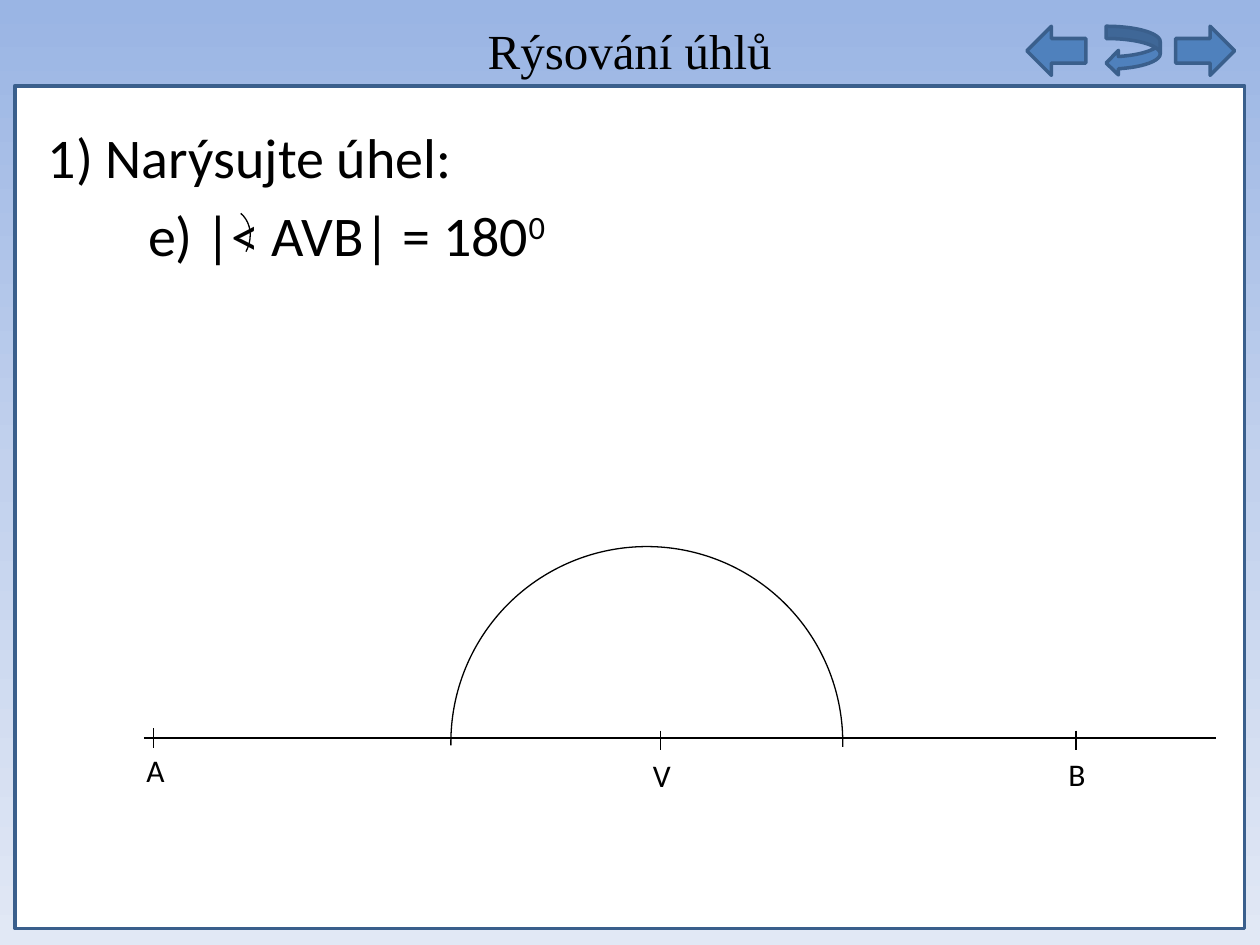
"""Builds a geometry slide on drawing a straight angle."""
from copy import deepcopy
from dataclasses import dataclass

from lxml import etree
from pptx import Presentation
from pptx.dml.color import RGBColor
from pptx.enum.shapes import MSO_CONNECTOR, MSO_SHAPE
from pptx.enum.text import MSO_ANCHOR, MSO_AUTO_SIZE, PP_ALIGN
from pptx.oxml.ns import qn
from pptx.util import Cm, Pt

STRAIGHT = MSO_CONNECTOR.STRAIGHT
RECTANGLE, ARC = MSO_SHAPE.RECTANGLE, MSO_SHAPE.ARC
LEFT_ARROW, RIGHT_ARROW = MSO_SHAPE.LEFT_ARROW, MSO_SHAPE.RIGHT_ARROW
RETURN_ARROW = MSO_SHAPE.CURVED_LEFT_ARROW
TOP, MIDDLE = MSO_ANCHOR.TOP, MSO_ANCHOR.MIDDLE
NO_AUTOSIZE = MSO_AUTO_SIZE.NONE
LEFT, CENTER = PP_ALIGN.LEFT, PP_ALIGN.CENTER


@dataclass(frozen=True)
class Theme:
    ink: str = "000000"
    panel: str = "FFFFFF"
    button: str = "4F81BD"
    border: str = "3A5F8C"
    sky: tuple = ((0, "9AB5E4"), (0.5, "C2D1ED"), (1, "E1E8F5"))
    title_font: str = "Times New Roman"
    body_font: str = "Calibri"
    title_size: int = 28
    body_size: int = 32
    label_size: int = 18
    border_width: float = 2
    drawing_width: float = 0.75


def write_text(paragraph, text, *, font, size, color, align=LEFT, superscript=False):
    run = paragraph.add_run()
    run.text = text
    run.font.name = font
    run.font.size = Pt(size)
    run.font.color.rgb = RGBColor.from_string(color)
    paragraph.alignment = align
    if superscript:
        run.font._element.set("baseline", "30000")


class SlideBuilder:
    def __init__(self, slide, theme):
        self.slide = slide
        self.theme = theme

    def background(self):
        fill = self.slide.background.fill
        fill.gradient()
        fill.gradient_angle = 270
        first_stop = fill._fill._gradFill.gsLst[0]
        first_stop.addnext(deepcopy(first_stop))
        for stop, (position, color) in zip(fill.gradient_stops, self.theme.sky):
            stop.position = position
            stop.color.rgb = RGBColor.from_string(color)

    def shape(self, kind, box, fill=None, angles=(), rotation=0):
        figure = self.slide.shapes.add_shape(kind, *map(Cm, box))
        figure.shadow.inherit = False
        figure.rotation = rotation
        for index, angle in enumerate(angles):
            figure.adjustments[index] = angle
        if fill:
            figure.fill.solid()
            figure.fill.fore_color.rgb = RGBColor.from_string(fill)
            self.outline(figure.line, self.theme.border, self.theme.border_width)
        else:
            figure.fill.background()
            self.outline(figure.line, self.theme.ink, self.theme.drawing_width)

    def outline(self, line, color, width):
        line.color.rgb = RGBColor.from_string(color)
        line.width = Pt(width)

    def segment(self, start, end):
        line = self.slide.shapes.add_connector(STRAIGHT, *map(Cm, start + end))
        self.outline(line.line, self.theme.ink, self.theme.drawing_width)
        etree.SubElement(line._element.spPr, qn("a:effectLst"))

    def placeholder(self, holder, box, anchor):
        holder.left, holder.top, holder.width, holder.height = map(Cm, box)
        holder._element.getparent().append(holder._element)
        frame = holder.text_frame
        frame.auto_size = NO_AUTOSIZE
        frame.vertical_anchor = anchor
        return frame

    def title(self, text, box):
        frame = self.placeholder(self.slide.shapes.title, box, MIDDLE)
        write_text(frame.paragraphs[0], text, font=self.theme.title_font,
                   size=self.theme.title_size, color=self.theme.ink, align=CENTER)

    def task(self, lines, box):
        frame = self.placeholder(self.slide.placeholders[1], box, TOP)
        for number, (indent, text, exponent) in enumerate(lines):
            paragraph = frame.add_paragraph() if number else frame.paragraphs[0]
            paragraph.space_before, paragraph.space_after = Pt(0), Pt(6)
            properties = paragraph._p.get_or_add_pPr()
            properties.set("marL", str(Cm(indent)))
            properties.set("indent", "0")
            etree.SubElement(properties, qn("a:buNone"))
            style = dict(font=self.theme.body_font, size=self.theme.body_size,
                         color=self.theme.ink)
            write_text(paragraph, text, **style)
            if exponent:
                write_text(paragraph, exponent, superscript=True, **style)

    def label(self, text, box):
        frame = self.slide.shapes.add_textbox(*map(Cm, box)).text_frame
        frame.word_wrap = True
        write_text(frame.paragraphs[0], text, font=self.theme.body_font,
                   size=self.theme.label_size, color=self.theme.ink)


def main():
    presentation = Presentation()
    presentation.slide_width, presentation.slide_height = Cm(25.4), Cm(19.05)
    theme = Theme()
    slide = presentation.slides.add_slide(presentation.slide_layouts[1])
    builder = SlideBuilder(slide, theme)

    builder.background()
    builder.shape(RECTANGLE, (0.3, 1.73, 24.79, 16.99), theme.panel)
    for arrow, left, width in ((RIGHT_ARROW, 23.7, 1.19), (LEFT_ARROW, 20.7, 1.19),
                               (RETURN_ARROW, 22.3, 1.09)):
        builder.shape(arrow, (left, 0.53, width, 0.99), theme.button)
    builder.title("Rýsování úhlů", (0.3, 0.28, 24.79, 1.45))
    builder.task([(0, "1) Narýsujte úhel:", ""), (2.02, "e) |< AVB| = 180", "0")],
                 (0.71, 2.34, 14.2, 3.2))

    builder.segment((2.9, 14.88), (24.51, 14.88))
    for point, x, tick_top, label_top in (("A", 3.1, 14.68, 15.01),
                                          ("V", 13.31, 14.73, 15.11),
                                          ("B", 21.69, 14.73, 15.09)):
        builder.segment((x, tick_top), (x, tick_top + 0.39))
        builder.label(point, (x - 0.4, label_top, 1.2, 1.02))
    builder.shape(ARC, (9.09, 11.02, 7.9, 7.9), angles=(107.49, 0.76))
    builder.shape(ARC, (3.81, 4.14, 1.19, 1.4), angles=(162, 205.86), rotation=39.9)

    presentation.save("out.pptx")


if __name__ == "__main__":
    main()
